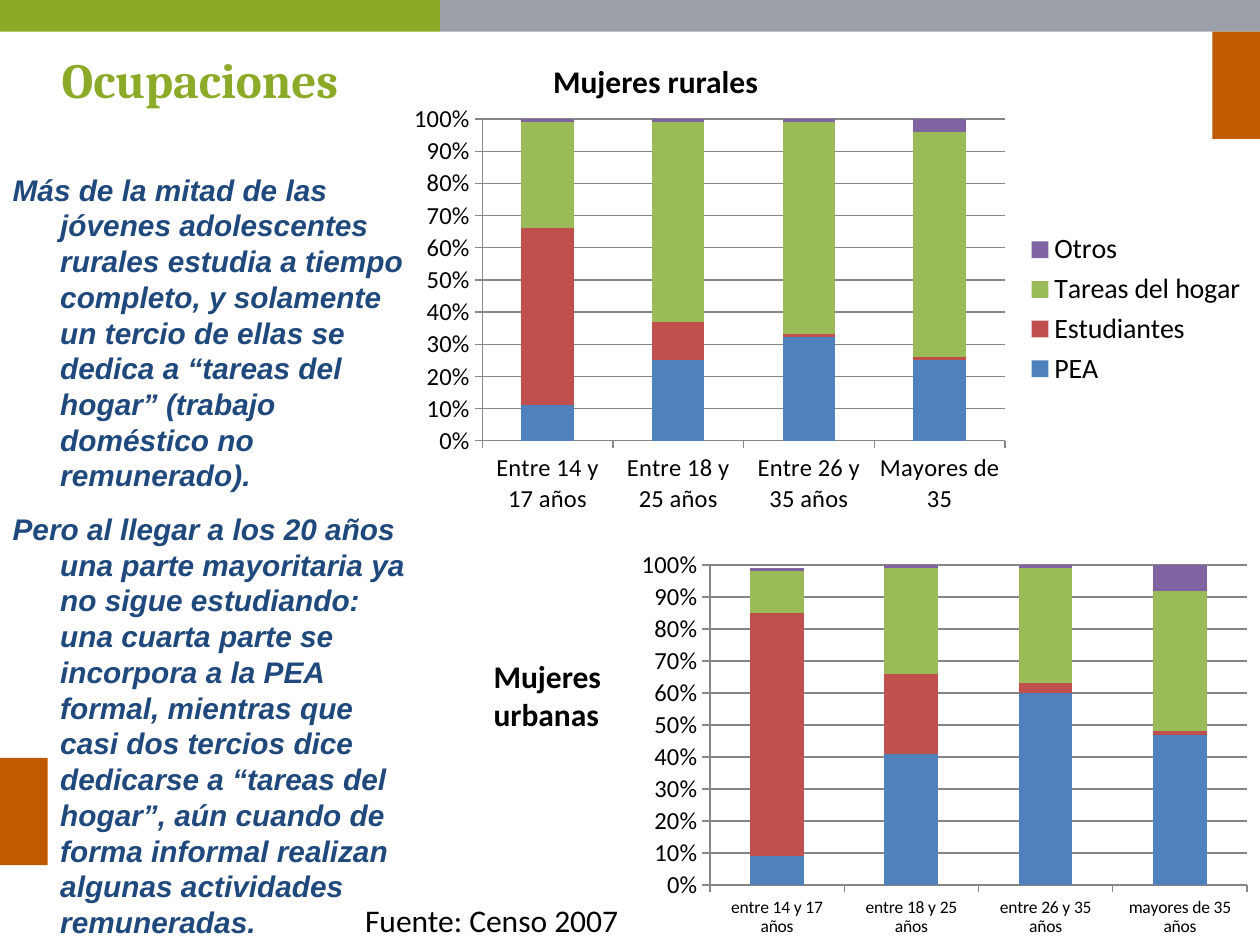
from lxml.etree import SubElement
from pptx import Presentation
from pptx.chart.data import CategoryChartData
from pptx.dml.color import RGBColor
from pptx.enum.chart import XL_CHART_TYPE, XL_LEGEND_POSITION, XL_TICK_MARK
from pptx.enum.shapes import MSO_SHAPE
from pptx.enum.text import MSO_ANCHOR, MSO_AUTO_SIZE, PP_ALIGN
from pptx.oxml import parse_xml
from pptx.oxml.ns import nsdecls, qn
from pptx.util import Cm, Pt

COLORS = {"green": "8BAA27", "gray": "9CA1A9", "orange": "BF5A00", "navy": "1F497D",
          "black": "000000", "grid": "868686", "PEA": "4F81BD", "Estudiantes": "C0504D",
          "Tareas del hogar": "9BBB59", "Otros": "8064A2"}

TITLE = "Ocupaciones"
BODY = [
    "Más de la mitad de las jóvenes adolescentes rurales estudia a tiempo completo, "
    "y solamente un tercio de ellas se dedica a “tareas del hogar” (trabajo doméstico "
    "no remunerado).",
    "Pero al llegar a los 20 años una parte mayoritaria ya no sigue estudiando: una "
    "cuarta parte se incorpora a la PEA formal, mientras que casi dos tercios dice "
    "dedicarse a “tareas del hogar”, aún cuando de forma informal realizan algunas "
    "actividades remuneradas.",
]

# Boxes are left, top, width, height in cm
BARS = [
    ("gray", (8.87, 0, 16.53, 0.64)),
    ("orange", (24.44, 0.64, 0.96, 2.16)),
    ("green", (0, 0, 8.87, 0.64)),
    ("orange", (0, 15.28, 0.96, 2.16)),
]
LABELS = [
    ("Mujeres rurales", (10.9, 1.12, 8.79, 1.02), True),
    ("Mujeres urbanas", (9.7, 13.13, 2.79, 1.8), True),
    ("Fuente: Censo 2007", (7.11, 18.03, 5.9, 1.02), False),
]

SERIES = ["PEA", "Estudiantes", "Tareas del hogar", "Otros"]
CHARTS = [
    {"type": XL_CHART_TYPE.COLUMN_STACKED_100, "box": (8, 1.93, 17.4, 8.61),
     "plot": (9.72, 2.4, 10.54, 6.49), "cat_size": 14, "legend": True, "max": None,
     "cats": ["Entre 14 y 17 años", "Entre 18 y 25 años", "Entre 26 y 35 años",
              "Mayores de 35"],
     "values": [(11, 25, 32, 25), (55, 12, 1, 1), (33, 62, 65, 70), (1, 1, 1, 4)]},
    {"type": XL_CHART_TYPE.COLUMN_STACKED, "box": (12.7, 10.92, 12.7, 8.13),
     "plot": (14.31, 11.39, 10.83, 6.45), "cat_size": 10, "legend": False, "max": 1,
     "cats": ["entre 14 y 17 años", "entre 18 y 25 años", "entre 26 y 35 años",
              "mayores de 35 años"],
     "values": [(0.09, 0.41, 0.6, 0.47), (0.76, 0.25, 0.03, 0.01),
                (0.13, 0.33, 0.36, 0.44), (0.01, 0.01, 0.01, 0.08)]},
]


def cm_box(box):
    return [Cm(v) for v in box]


def rgb(name):
    return RGBColor.from_string(COLORS[name])


def place(sp, box):
    sp.left, sp.top, sp.width, sp.height = cm_box(box)


def style_font(font, name, size, color, bold=False, italic=False):
    font.name, font.size = name, Pt(size)
    font.bold, font.italic = bold, italic
    font.color.rgb = rgb(color)


def fill_title(sp):
    place(sp, (0.99, 1.02, 7.11, 1.3))
    tf = sp.text_frame
    tf.text = TITLE
    tf.auto_size = MSO_AUTO_SIZE.NONE
    tf.vertical_anchor = MSO_ANCHOR.MIDDLE
    p = tf.paragraphs[0]
    p.alignment, p.line_spacing = PP_ALIGN.LEFT, 0.9
    style_font(p.runs[0].font, "Cambria", 28, "green", bold=True)


def fill_body(sp):
    place(sp, (0, 3.33, 8.71, 15.6))
    tf = sp.text_frame
    tf.text = "\n".join(BODY)
    tf.auto_size = MSO_AUTO_SIZE.NONE
    for p in tf.paragraphs:
        p.line_spacing = 1.0
        p.space_before, p.space_after = Pt(3.4), Pt(6.8)
        style_font(p.runs[0].font, "Arial", 17, "navy", bold=True, italic=True)
        pPr = p._p.get_or_add_pPr()
        pPr.set("marL", str(Cm(0.96)))
        pPr.set("indent", str(-Cm(0.96)))
        SubElement(pPr, qn("a:buNone"))


def add_bar(s, color, box):
    sp = s.shapes.add_shape(MSO_SHAPE.RECTANGLE, *cm_box(box))
    sp.shadow.inherit = False
    sp.fill.solid()
    sp.fill.fore_color.rgb = rgb(color)
    sp.line.fill.background()


def add_label(s, text, box, bold):
    tf = s.shapes.add_textbox(*cm_box(box)).text_frame
    tf.word_wrap = True
    tf.auto_size = MSO_AUTO_SIZE.SHAPE_TO_FIT_TEXT
    tf.text = text
    style_font(tf.paragraphs[0].runs[0].font, "Calibri", 18, "black", bold)


def set_plot_area(chart, box, plot_box):
    """Fix the inner plot area, given on the slide, as fractions of the chart's box."""
    left, top, width, height = box
    x, y, w, h = plot_box
    fractions = ((x - left) / width, (y - top) / height, w / width, h / height)
    area = chart.element.find(".//" + qn("c:plotArea"))
    for old in area.findall(qn("c:layout")):
        area.remove(old)
    sizes = "".join(f'<c:{tag} val="{v:.4f}"/>' for tag, v in zip("xywh", fractions))
    area.insert(0, parse_xml(
        f'<c:layout {nsdecls("c")}><c:manualLayout><c:layoutTarget val="inner"/>'
        f'<c:xMode val="edge"/><c:yMode val="edge"/>{sizes}</c:manualLayout></c:layout>'))


def add_stacked_chart(s, info):
    data = CategoryChartData()
    data.categories = info["cats"]
    for name, values in zip(SERIES, info["values"]):
        data.add_series(name, values)
    chart = s.shapes.add_chart(info["type"], *cm_box(info["box"]), data).chart
    chart.has_title = False
    style_font(chart.font, "Calibri", 10, "black")
    set_plot_area(chart, info["box"], info["plot"])

    plot = chart.plots[0]
    plot.gap_width, plot.overlap, plot.vary_by_categories = 150, 100, False
    for series in plot.series:
        series.format.fill.solid()
        series.format.fill.fore_color.rgb = rgb(series.name)

    cat, val = chart.category_axis, chart.value_axis
    val.has_major_gridlines = True
    val.minimum_scale = 0
    val.maximum_scale = info["max"]
    val.major_unit = 0.1
    val.tick_labels.number_format = "0%"
    val.tick_labels.number_format_is_linked = False
    for axis, size in ((cat, info["cat_size"]), (val, 14)):
        axis.major_tick_mark = XL_TICK_MARK.OUTSIDE
        axis.tick_labels.font.size = Pt(size)
    for line in (cat.format.line, val.format.line, val.major_gridlines.format.line):
        line.color.rgb = rgb("grid")
        line.width = Pt(0.75)

    chart.has_legend = info["legend"]
    if chart.has_legend:
        chart.legend.position = XL_LEGEND_POSITION.RIGHT
        chart.legend.include_in_layout = False
        chart.legend.font.size = Pt(16)


def main():
    prs = Presentation()
    prs.slide_width, prs.slide_height = Cm(25.4), Cm(19.05)
    s = prs.slides.add_slide(prs.slide_layouts[1])
    fill_title(s.shapes.title)
    fill_body(s.placeholders[1])
    for bar in BARS:
        add_bar(s, *bar)
    for chart in CHARTS:
        add_stacked_chart(s, chart)
    for label in LABELS:
        add_label(s, *label)
    prs.save("out.pptx")


if __name__ == "__main__":
    main()
